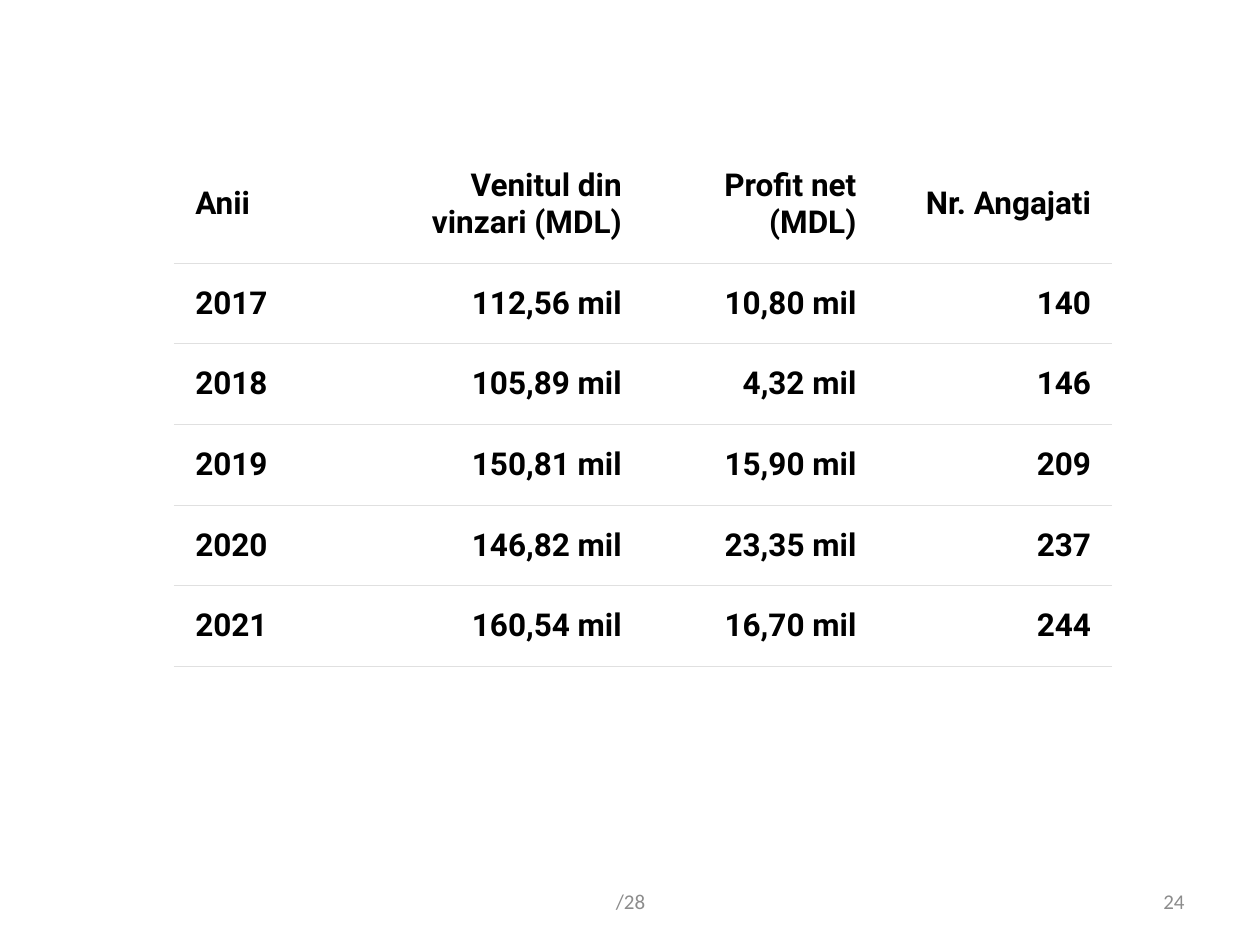
import dataclasses

import lxml.etree
import pptx
import pptx.dml.color
import pptx.enum.text
import pptx.oxml.ns
import pptx.util

ALIGN = pptx.enum.text.PP_ALIGN
MIDDLE = pptx.enum.text.MSO_ANCHOR.MIDDLE
NO_STYLE = "{2D5ABB26-0587-4C30-8999-92F81FD0307C}"


@dataclasses.dataclass(frozen=True)
class Theme:
    paper: str = "FFFFFF"
    ink: str = "000000"
    muted: str = "8C8C8C"
    rule: str = "E0E0E0"
    rule_width: float = 0.75
    table_font: str = "Roboto"
    table_size: int = 18
    footer_font: str = "Calibri"
    footer_size: int = 12
    cell_margin: float = 0.17


class Deck:
    """Holds the theme and the current slide; lengths are percent of the slide."""

    def __init__(self, theme, width, height):
        self.theme = theme
        self.prs = pptx.Presentation()
        self.prs.slide_width = pptx.util.Inches(width)
        self.prs.slide_height = pptx.util.Inches(height)
        self.slide = self.prs.slides.add_slide(self.prs.slide_layouts[6])

    def x(self, share):
        return round(self.prs.slide_width * share / 100)

    def y(self, share):
        return round(self.prs.slide_height * share / 100)

    def add_text(self, tf, text, align, color, **fmt):
        tf.word_wrap = True
        p = tf.paragraphs[0]
        p.alignment = align
        r = p.add_run()
        r.text = text
        for name, value in fmt.items():
            setattr(r.font, name, value)
        r.font.color.rgb = pptx.dml.color.RGBColor.from_string(color)

    def footer(self, text, left, width, align):
        t = self.theme
        sp = self.slide.shapes.add_textbox(
            self.x(left), self.y(92.67), self.x(width), self.y(5.33))
        sp.text_frame.vertical_anchor = MIDDLE
        self.add_text(sp.text_frame, text, align, t.muted, name=t.footer_font,
                      size=pptx.util.Pt(t.footer_size))

    def bottom_rule(self, cell):
        tag = pptx.oxml.ns.qn
        ln = lxml.etree.Element(
            tag("a:lnB"), w=str(pptx.util.Pt(self.theme.rule_width)))
        fill = lxml.etree.SubElement(ln, tag("a:solidFill"))
        lxml.etree.SubElement(fill, tag("a:srgbClr"), val=self.theme.rule)
        # Borders come before the fill in the cell properties
        cell._tc.get_or_add_tcPr().insert(0, ln)

    def cell(self, cell, text, align):
        t = self.theme
        for side in ("left", "right", "top", "bottom"):
            setattr(cell, f"margin_{side}", pptx.util.Inches(t.cell_margin))
        cell.vertical_anchor = MIDDLE
        cell.fill.solid()
        cell.fill.fore_color.rgb = pptx.dml.color.RGBColor.from_string(t.paper)
        self.add_text(cell.text_frame, text, align, t.ink, name=t.table_font,
                      size=pptx.util.Pt(t.table_size), bold=True)
        self.bottom_rule(cell)

    def table(self, rows, left, top, width, header_height, row_height):
        heights = [header_height] + [row_height] * (len(rows) - 1)
        frame = self.slide.shapes.add_table(
            len(rows), len(rows[0]), self.x(left), self.y(top),
            self.x(width), self.y(sum(heights)))
        table = frame.table
        table.horz_banding = False
        table._tbl.tblPr.find(pptx.oxml.ns.qn("a:tableStyleId")).text = NO_STYLE
        for i, (values, height) in enumerate(zip(rows, heights)):
            table.rows[i].height = self.y(height)
            for j, value in enumerate(values):
                self.cell(table.cell(i, j), value, ALIGN.RIGHT if j else ALIGN.LEFT)


RESULTS = [
    ("Anii", "Venitul din vinzari (MDL)", "Profit net (MDL)", "Nr. Angajati"),
    ("2017", "112,56 mil", "10,80 mil", "140"),
    ("2018", "105,89 mil", "4,32 mil", "146"),
    ("2019", "150,81 mil", "15,90 mil", "209"),
    ("2020", "146,82 mil", "23,35 mil", "237"),
    ("2021", "160,54 mil", "16,70 mil", "244"),
]


def main():
    deck = Deck(Theme(), 10, 7.5)

    # Footer: page total and page number
    deck.footer("/28", 34.2, 31.7, ALIGN.CENTER)
    deck.footer("24", 71.7, 23.3, ALIGN.RIGHT)

    # Yearly results
    deck.table(RESULTS, left=13.8, top=15.33, width=74.5,
               header_height=12.27, row_height=8.35)

    deck.prs.save("out.pptx")


if __name__ == "__main__":
    main()
